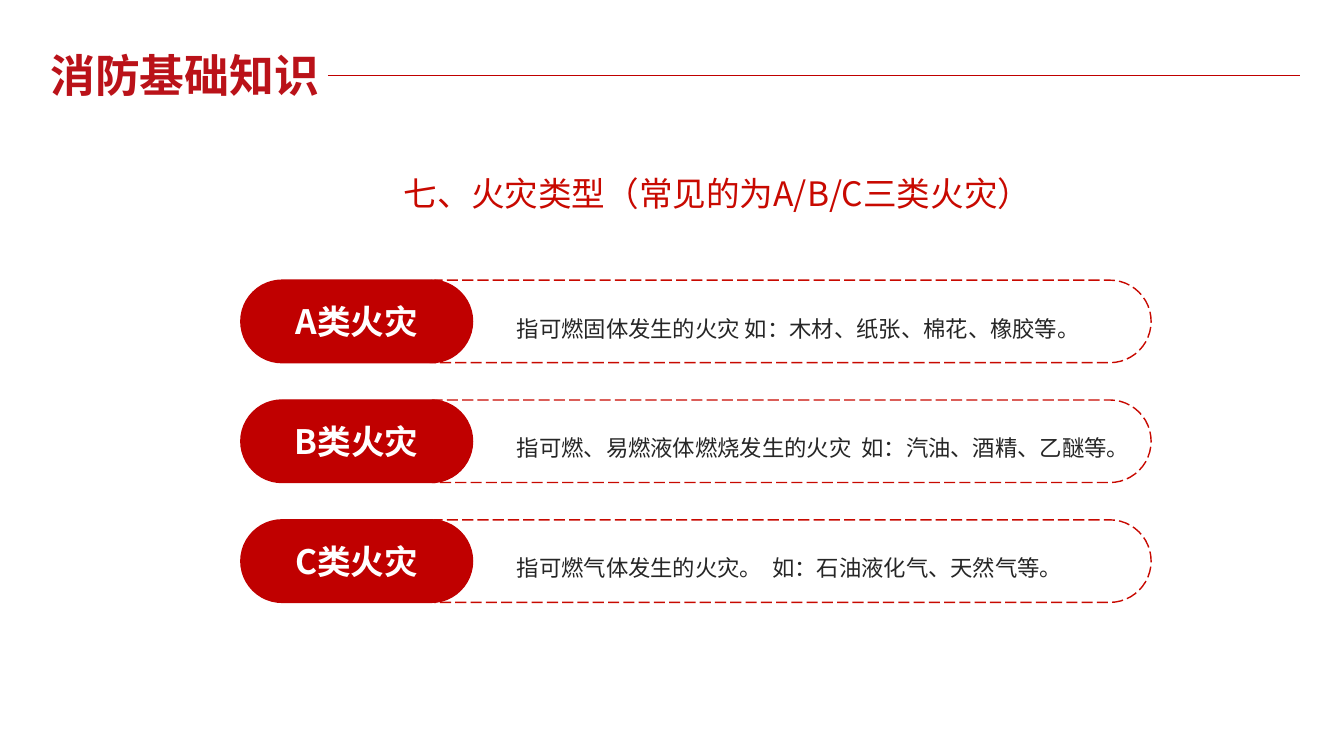
from pptx import Presentation
from pptx.dml.color import RGBColor
from pptx.enum.dml import MSO_LINE
from pptx.enum.shapes import MSO_CONNECTOR, MSO_SHAPE
from pptx.enum.text import MSO_ANCHOR, MSO_AUTO_SIZE, PP_ALIGN
from pptx.oxml.ns import qn
from pptx.util import Cm, Pt
from lxml import etree

RED = RGBColor(0xC8, 0x09, 0x00)
DEEP_RED = RGBColor(0xC0, 0x00, 0x00)
CRIMSON = RGBColor(0xBA, 0x12, 0x19)
INK = RGBColor(0x26, 0x26, 0x26)
WHITE = RGBColor(0xFF, 0xFF, 0xFF)
FONT = "Noto Sans CJK SC"
PILL = MSO_SHAPE.ROUNDED_RECTANGLE
STRAIGHT = MSO_CONNECTOR.STRAIGHT
LONG_DASH = MSO_LINE.LONG_DASH
MIDDLE = MSO_ANCHOR.MIDDLE
GROW = MSO_AUTO_SIZE.SHAPE_TO_FIT_TEXT
CENTER, LEFT = PP_ALIGN.CENTER, PP_ALIGN.LEFT

FIRE_CLASSES = [
    ("A类火灾", "指可燃固体发生的火灾 如：木材、纸张、棉花、橡胶等。"),
    ("B类火灾", "指可燃、易燃液体燃烧发生的火灾  如：汽油、酒精、乙醚等。"),
    ("C类火灾", "指可燃气体发生的火灾。  如：石油液化气、天然气等。"),
]
FIRST_TOP, PITCH, PILL_HEIGHT = 7.06, 3.02, 2.08


class FireSlide:
    """Draws styled elements on one slide, with lengths in centimetres."""

    def __init__(self, slide):
        self.slide = slide

    def add_text(self, paragraph, text, size, color, bold=False):
        """Add one styled run to a paragraph and return it."""
        run = paragraph.add_run()
        run.text = text
        run.font.name = FONT
        run.font.size = Pt(size)
        run.font.bold = bold
        run.font.color.rgb = color
        east_asian = etree.SubElement(run.font._element, qn("a:ea"))
        east_asian.set("typeface", FONT)
        return run

    def heading(self, box, text, size, color, bold=False):
        """Add a text box that grows with its text and return the run."""
        frame = self.slide.shapes.add_textbox(*map(Cm, box)).text_frame
        frame.word_wrap = True
        frame.auto_size = GROW
        return self.add_text(frame.paragraphs[0], text, size, color, bold)

    def pill(self, left, top, width, line_color, fill=None, dash=None):
        """Add a fully rounded bar and return its first paragraph."""
        pill = self.slide.shapes.add_shape(
            PILL, Cm(left), Cm(top), Cm(width), Cm(PILL_HEIGHT))
        pill.adjustments[0] = 0.5
        pill.shadow.inherit = False
        if fill is None:
            pill.fill.background()
        else:
            pill.fill.solid()
            pill.fill.fore_color.rgb = fill
        pill.line.color.rgb = line_color
        pill.line.width = Pt(1)
        if dash is not None:
            pill.line.dash_style = dash
        pill.text_frame.word_wrap = True
        pill.text_frame.vertical_anchor = MIDDLE
        return pill.text_frame.paragraphs[0]

    def fire_class(self, top, label, description):
        """Add a dashed description bar with its solid label on top."""
        detail = self.pill(9.93, top, 19.08, RED, dash=LONG_DASH)
        detail.alignment = LEFT
        detail.level = 2
        detail.line_spacing = 1.5
        self.add_text(detail, description, 16, INK)
        name = self.pill(6.07, top, 5.84, DEEP_RED, fill=DEEP_RED)
        name.alignment = CENTER
        self.add_text(name, label, 24, WHITE, bold=True)

    def rule(self, left, right, y):
        """Add a thin horizontal line."""
        rule = self.slide.shapes.add_connector(
            STRAIGHT, Cm(left), Cm(y), Cm(right), Cm(y))
        rule.line.color.rgb = DEEP_RED
        rule.line.width = Pt(0.5)
        etree.SubElement(rule._element.spPr, qn("a:effectLst"))


def main():
    """Build and save the slide."""
    deck = Presentation()
    deck.slide_width, deck.slide_height = Cm(33.87), Cm(19.05)
    page = FireSlide(deck.slides.add_slide(deck.slide_layouts[6]))

    page.heading((9.93, 4.24, 16.59, 1.27),
                 "七、火灾类型（常见的为A/B/C三类火灾）", 24, RED)
    for row, (label, description) in enumerate(FIRE_CLASSES):
        page.fire_class(FIRST_TOP + row * PITCH, label, description)

    title = page.heading((1.02, 1.09, 8.92, 1.63),
                         "消防基础知识", 32, CRIMSON, bold=True)
    title.font.fill.gradient()
    title.font.fill.gradient_angle = 90
    stops = zip(title.font.fill.gradient_stops, (CRIMSON, RED), (0, 0.98))
    for stop, color, position in stops:
        stop.color.rgb = color
        stop.position = position
    page.rule(8.26, 32.77, 1.9)
    deck.save("out.pptx")


if __name__ == "__main__":
    main()
